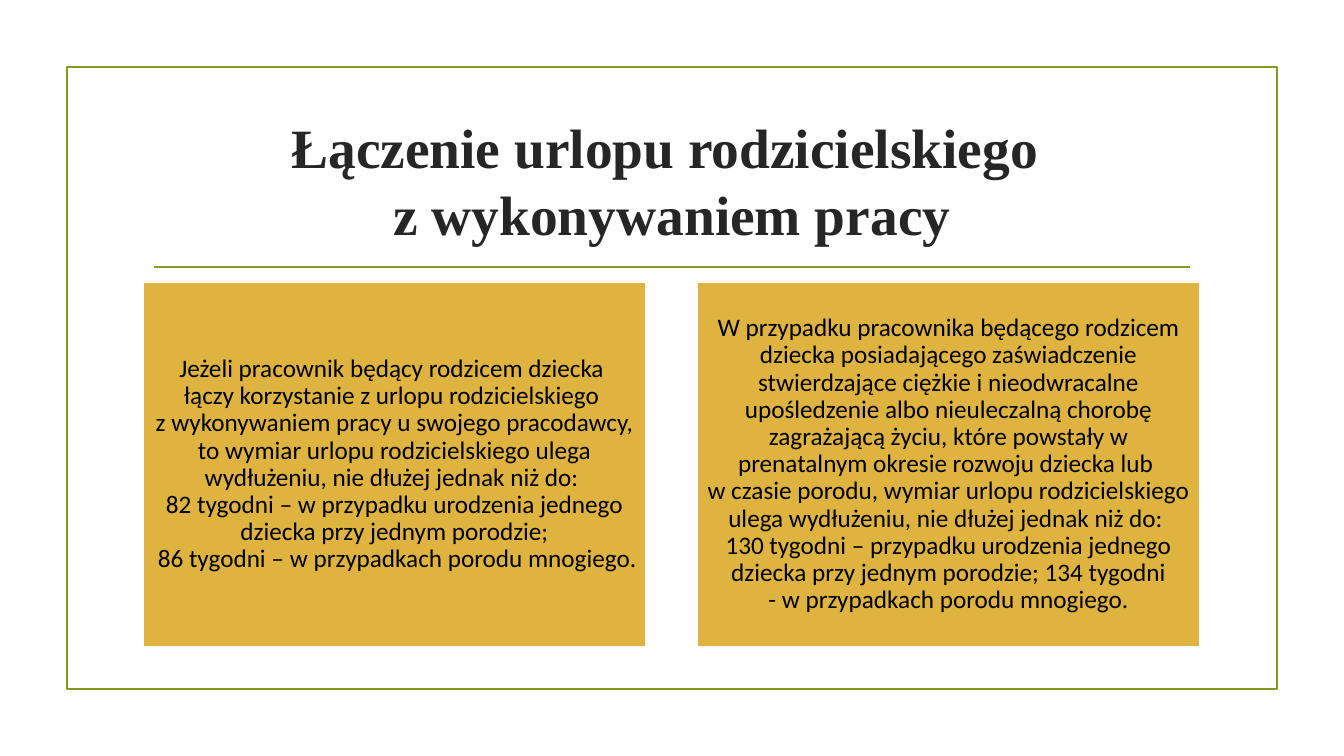
from dataclasses import dataclass

from pptx import Presentation
from pptx.dml.color import RGBColor
from pptx.enum.shapes import MSO_CONNECTOR, MSO_SHAPE
from pptx.enum.text import MSO_ANCHOR, MSO_AUTO_SIZE, PP_ALIGN
from pptx.oxml.ns import qn
from pptx.util import Pt
from lxml.etree import SubElement

EMU_PER_INCH = 914400
PX_PER_INCH = 100.8


@dataclass(frozen=True)
class Theme:
    green: RGBColor = RGBColor(0x83, 0x99, 0x2A)
    gold: RGBColor = RGBColor(0xDE, 0xB3, 0x40)
    white: RGBColor = RGBColor(0xFF, 0xFF, 0xFF)
    black: RGBColor = RGBColor(0x00, 0x00, 0x00)
    title_ink: RGBColor = RGBColor(0x26, 0x26, 0x26)
    title_font: str = "Times New Roman"
    body_font: str = "Calibri"
    title_size: float = 39.6
    body_size: float = 18
    line_width: float = 1.25


@dataclass(frozen=True)
class Area:
    left: int
    top: int
    width: int
    height: int


@dataclass(frozen=True)
class Card:
    area: Area
    text: str


THEME = Theme()

TITLE_AREA = Area(143, 108, 1058, 144)
FRAME_AREA = Area(67, 67, 1210, 622)
RULE_AREA = Area(154, 267, 1036, 0)
CARD_LEFT, CARD_TOP, CARD_WIDTH, CARD_HEIGHT = 143, 282, 503, 365
CARD_STEP = 554
CARD_INSET = 7

TITLE = "Łączenie urlopu rodzicielskiego \nz wykonywaniem pracy"
CARD_TEXTS = (
    "Jeżeli pracownik będący rodzicem dziecka \n"
    "łączy korzystanie z urlopu rodzicielskiego \n"
    "z wykonywaniem pracy u swojego pracodawcy, to wymiar urlopu "
    "rodzicielskiego ulega wydłużeniu, nie dłużej jednak niż do: \n"
    "82 tygodni ‒ w przypadku urodzenia jednego dziecka przy jednym porodzie;\n"
    " 86 tygodni ‒ w przypadkach porodu mnogiego.",
    "W przypadku pracownika będącego rodzicem dziecka posiadającego "
    "zaświadczenie stwierdzające ciężkie i nieodwracalne upośledzenie albo "
    "nieuleczalną chorobę zagrażającą życiu, które powstały w prenatalnym "
    "okresie rozwoju dziecka lub \n"
    "w czasie porodu, wymiar urlopu rodzicielskiego ulega wydłużeniu, "
    "nie dłużej jednak niż do: \n"
    "130 tygodni – przypadku urodzenia jednego dziecka przy jednym porodzie; "
    "134 tygodni\n"
    "- w przypadkach porodu mnogiego.",
)
CARDS = [
    Card(Area(CARD_LEFT + index * CARD_STEP, CARD_TOP, CARD_WIDTH, CARD_HEIGHT), text)
    for index, text in enumerate(CARD_TEXTS)
]


def px(length: float) -> int:
    return round(length * EMU_PER_INCH / PX_PER_INCH)


def apply(target, values: dict) -> None:
    for name, value in values.items():
        setattr(target, name, value)


def write(shape, text: str, font_values: dict, spacing: float, inset: int) -> None:
    frame = shape.text_frame
    margins = {f"margin_{side}": px(inset) for side in ("left", "right", "top", "bottom")}
    apply(frame, {"word_wrap": True, "auto_size": MSO_AUTO_SIZE.NONE,
                  "vertical_anchor": MSO_ANCHOR.MIDDLE, **margins})
    para = frame.paragraphs[0]
    para.text = text
    apply(para, {"alignment": PP_ALIGN.CENTER, "line_spacing": spacing})
    for span in para.runs:
        color = font_values["color"]
        apply(span.font, {key: val for key, val in font_values.items() if key != "color"})
        span.font.color.rgb = color


def add_box(page, area: Area, line_color: RGBColor, fill_color: RGBColor | None = None):
    box = page.shapes.add_shape(MSO_SHAPE.RECTANGLE, px(area.left), px(area.top),
                                px(area.width), px(area.height))
    box.shadow.inherit = False
    if fill_color is None:
        box.fill.background()
    else:
        box.fill.solid()
        box.fill.fore_color.rgb = fill_color
    box.line.color.rgb = line_color
    box.line.width = Pt(THEME.line_width)
    return box


def add_rule(page, area: Area) -> None:
    rule = page.shapes.add_connector(MSO_CONNECTOR.STRAIGHT, px(area.left), px(area.top),
                                     px(area.left + area.width), px(area.top + area.height))
    rule.line.color.rgb = THEME.green
    rule.line.width = Pt(THEME.line_width)
    SubElement(rule._element.spPr, qn("a:effectLst"))


def main() -> None:
    deck = Presentation()
    apply(deck, {"slide_width": px(1344), "slide_height": px(756)})
    page = deck.slides.add_slide(deck.slide_layouts[5])

    # Frame and rule under the title
    add_box(page, FRAME_AREA, THEME.green)
    add_rule(page, RULE_AREA)

    # Title
    title = page.shapes.title
    apply(title, {name: px(getattr(TITLE_AREA, name))
                  for name in ("left", "top", "width", "height")})
    write(title, TITLE, {"name": THEME.title_font, "size": Pt(THEME.title_size),
                         "bold": True, "color": THEME.title_ink}, 1.0, 5)

    # Two cards
    body_font = {"name": THEME.body_font, "size": Pt(THEME.body_size),
                 "color": THEME.black}
    for card in CARDS:
        box = add_box(page, card.area, THEME.white, THEME.gold)
        write(box, card.text, body_font, 0.9, CARD_INSET)

    deck.save("out.pptx")


if __name__ == "__main__":
    main()
